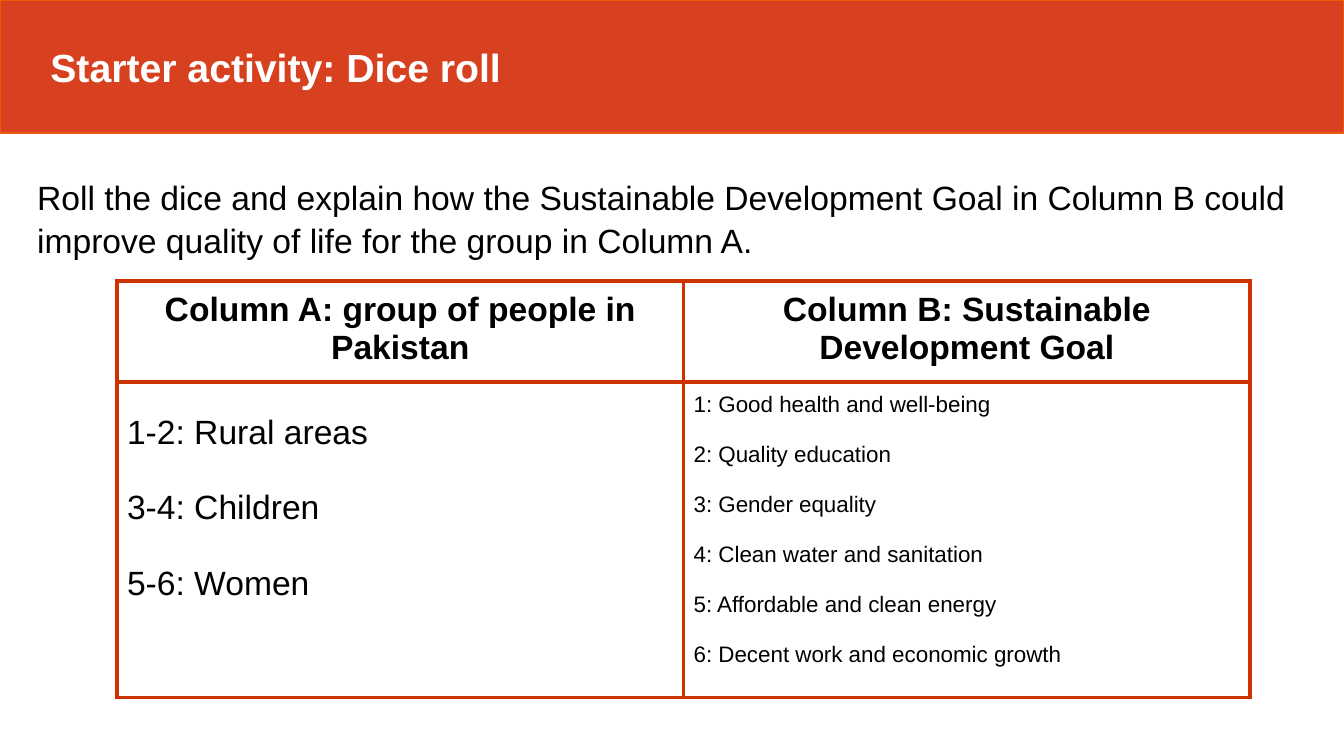
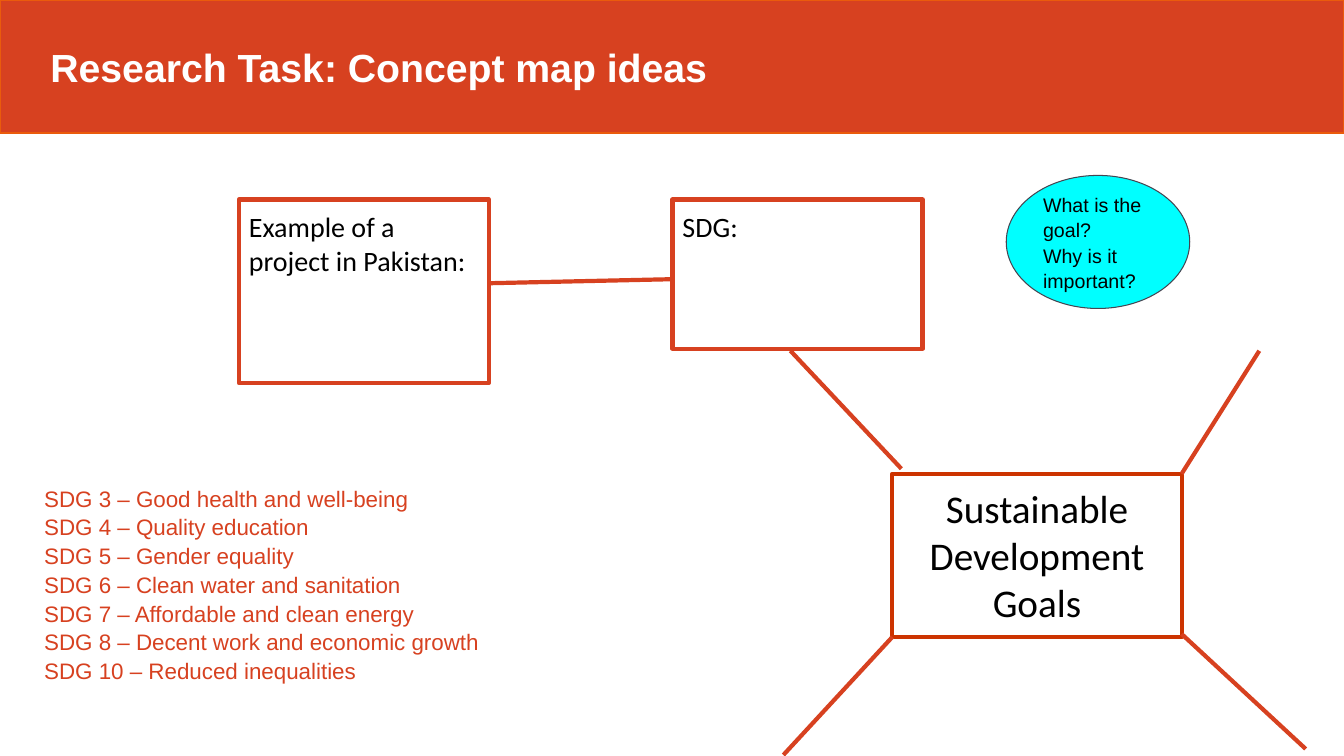
import pptx
import pptx.util
import pptx.dml.color
import pptx.enum.shapes
import pptx.enum.text
import pptx.oxml.ns
import lxml.etree

PX = 9144
SHAPE = pptx.enum.shapes.MSO_SHAPE
ALIGN = pptx.enum.text.PP_ALIGN
ANCHOR = pptx.enum.text.MSO_ANCHOR
THEME = {
    "red": "D74120", "rust": "CC3300", "orange": "EA5B0C", "cyan": "00FFFF",
    "slate": "454551", "black": "000000", "white": "FFFFFF",
    "title": {"name": "Arial", "size": 28, "bold": True, "color": "white"},
    "head": {"name": "Arial", "size": 24, "bold": True, "color": "black"},
    "body": {"name": "Arial", "size": 24, "bold": False, "color": "black"},
    "goal": {"name": "Arial", "size": 16, "bold": False, "color": "black"},
    "sdg": {"name": "Arial", "size": 16, "bold": False, "color": "red"},
    "hint": {"name": "Arial", "size": 14, "bold": False, "color": "black"},
    "topic": {"name": "Calibri", "size": 28, "bold": False, "color": "black"},
    "note": {"name": "Calibri", "size": 20, "bold": False, "color": "black"},
    "rule": 3,
}


def rgb(name):
    return pptx.dml.color.RGBColor.from_string(THEME[name])


def write(tf, lines, style, align=ALIGN.LEFT, spacing=1.0, gap=0):
    for i, line in enumerate(lines):
        p = tf.paragraphs[0] if i == 0 else tf.add_paragraph()
        p.alignment = align
        p.line_spacing = spacing
        if i and gap:
            p.space_before = pptx.util.Pt(gap)
        r = p.add_run()
        r.text = line
        for key, value in THEME[style].items():
            if key == "color":
                r.font.color.rgb = rgb(value)
            else:
                setattr(r.font, key, pptx.util.Pt(value) if key == "size" else value)


prs = pptx.Presentation()
prs.slide_width, prs.slide_height = 1333 * PX, 750 * PX
blank = prs.slide_layouts[6]

titles = ["Starter activity: Dice roll", "Research Task: Concept map ideas"]
starter, research = [prs.slides.add_slide(blank) for title in titles]

goals = ["Good health and well-being", "Quality education", "Gender equality",
         "Clean water and sanitation", "Affordable and clean energy",
         "Decent work and economic growth"]
sdgs = [f"SDG {n} – {goal}" for n, goal in enumerate(goals, 3)]
sdgs.append("SDG 10 – Reduced inequalities")

shapes = [
    (s, SHAPE.RECTANGLE, (0, 0, 1333, 132), "red", ("orange", 1), [title], "title",
     ALIGN.LEFT, ANCHOR.MIDDLE, 1.0, (50, 5))
    for s, title in zip((starter, research), titles)
] + [
    (research, SHAPE.RECTANGLE, (885, 470, 287, 162), None, ("rust", THEME["rule"]),
     ["Sustainable Development Goals"], "topic", ALIGN.CENTER, ANCHOR.TOP, 1.0, (10, 10)),
    (research, SHAPE.RECTANGLE, (667, 198, 248, 148), None, ("red", THEME["rule"]),
     ["SDG:"], "note", ALIGN.LEFT, ANCHOR.TOP, 1.0, (10, 10)),
    (research, SHAPE.RECTANGLE, (237, 198, 248, 182), None, ("red", THEME["rule"]),
     ["Example of a project in Pakistan:"], "note", ALIGN.LEFT, ANCHOR.TOP, 1.0, (10, 10)),
    (research, SHAPE.OVAL, (998, 174, 182, 132), "cyan", ("slate", 0.75),
     ["What is the goal?", "Why is it important?"], "hint",
     ALIGN.LEFT, ANCHOR.MIDDLE, 1.07, (10, 10)),
    (starter, None, (27, 168, 1260, 91), None, None,
     ["Roll the dice and explain how the Sustainable Development Goal in Column B could "
      "improve quality of life for the group in Column A."], "body",
     ALIGN.LEFT, ANCHOR.TOP, 1.07, (10, 5)),
    (research, None, (34, 469, 472, 209), None, None, sdgs, "sdg",
     ALIGN.LEFT, ANCHOR.TOP, 1.07, (10, 10)),
]
for s, kind, at, fill, line, lines, style, align, anchor, spacing, (left, edge) in shapes:
    box = [v * PX for v in at]
    if kind is None:
        sp = s.shapes.add_textbox(*box)
    else:
        sp = s.shapes.add_shape(kind, *box)
        sp.shadow.inherit = False
        sp.line.color.rgb = rgb(line[0])
        sp.line.width = pptx.util.Pt(line[1])
        if fill:
            sp.fill.solid()
            sp.fill.fore_color.rgb = rgb(fill)
        else:
            sp.fill.background()
    tf = sp.text_frame
    frame = {"word_wrap": True, "vertical_anchor": anchor, "margin_left": left * PX,
             "margin_right": 10 * PX, "margin_top": edge * PX, "margin_bottom": edge * PX}
    for key, value in frame.items():
        setattr(tf, key, value)
    write(tf, lines, style, align, spacing)

links = [(784, 348, 894, 465), (1172, 629, 1295, 743), (1249, 348, 1172, 470),
         (777, 749, 885, 632), (485, 281, 667, 277)]
for link in links:
    cx = research.shapes.add_connector(
        pptx.enum.shapes.MSO_CONNECTOR.STRAIGHT, *[v * PX for v in link])
    cx.line.color.rgb = rgb("red")
    cx.line.width = pptx.util.Pt(THEME["rule"])
    lxml.etree.SubElement(cx._element.spPr, pptx.oxml.ns.qn("a:effectLst"))

table = starter.shapes.add_table(2, 2, 116 * PX, 279 * PX, 1124 * PX, 413 * PX).table
table.first_row = table.horz_banding = False
for column in table.columns:
    column.width = 562 * PX
for row, height in zip(table.rows, (100, 313)):
    row.height = height * PX

cells = [
    (0, 0, ["Column A: group of people in Pakistan"], "head", ALIGN.CENTER, 0, 10),
    (0, 1, ["Column B: Sustainable Development Goal"], "head", ALIGN.CENTER, 0, 10),
    (1, 0, ["1-2: Rural areas", "3-4: Children", "5-6: Women"], "body", ALIGN.LEFT, 27, 32),
    (1, 1, [f"{n}: {goal}" for n, goal in enumerate(goals, 1)], "goal", ALIGN.LEFT, 18, 10),
]
for row, col, lines, style, align, gap, top in cells:
    cell = table.cell(row, col)
    margins = {"margin_left": 10, "margin_right": 10, "margin_top": top, "margin_bottom": 10}
    for key, value in margins.items():
        setattr(cell, key, value * PX)
    write(cell.text_frame, lines, style, align, gap=gap)
    tcPr = cell._tc.get_or_add_tcPr()
    for side in ("lnL", "lnR", "lnT", "lnB"):
        ln = lxml.etree.SubElement(tcPr, pptx.oxml.ns.qn(f"a:{side}"),
                                   w=str(pptx.util.Pt(THEME["rule"])))
        solid = lxml.etree.SubElement(ln, pptx.oxml.ns.qn("a:solidFill"))
        lxml.etree.SubElement(solid, pptx.oxml.ns.qn("a:srgbClr"), val=THEME["rust"])
    cell.fill.background()

prs.save("out.pptx")
